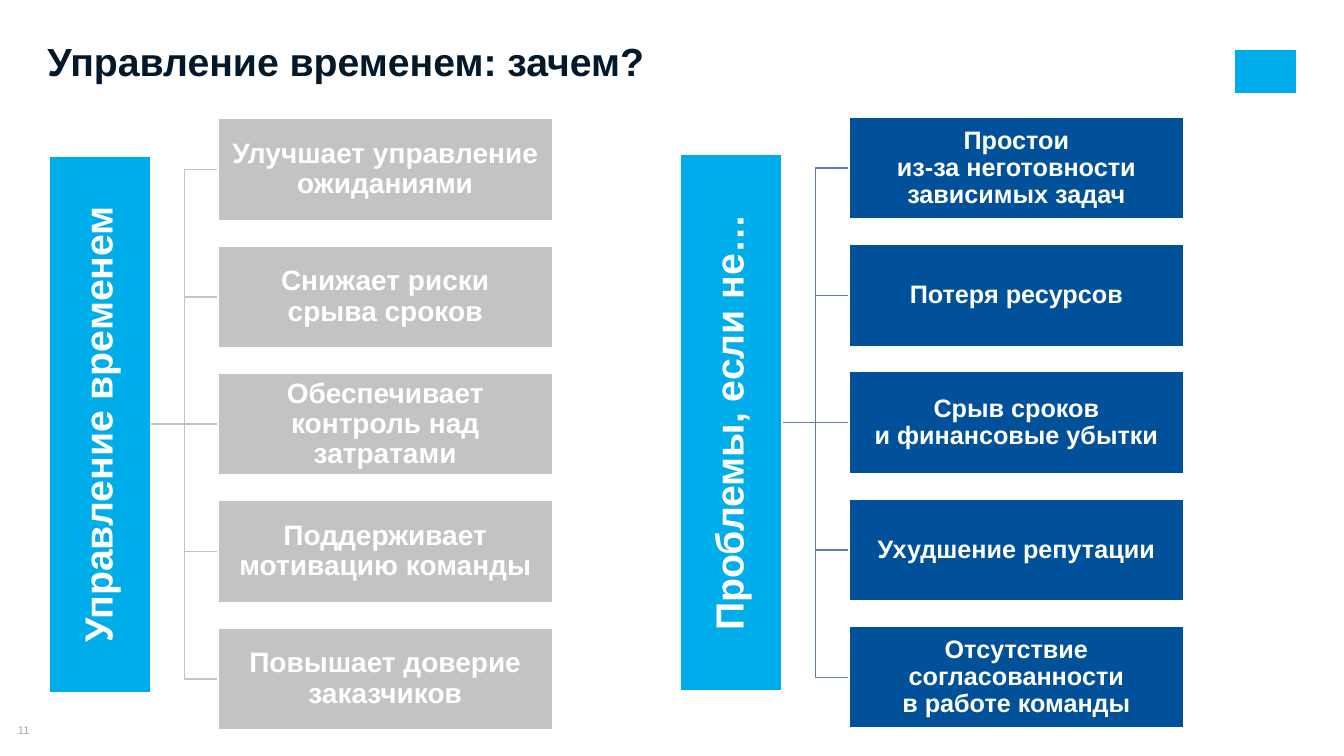
from dataclasses import dataclass

from lxml import etree
from pptx import Presentation
from pptx.dml.color import RGBColor
from pptx.enum.shapes import MSO_CONNECTOR, MSO_SHAPE
from pptx.enum.text import MSO_ANCHOR, PP_ALIGN
from pptx.oxml.ns import qn
from pptx.util import Inches, Pt

RECTANGLE = MSO_SHAPE.RECTANGLE
STRAIGHT = MSO_CONNECTOR.STRAIGHT
ELBOW = MSO_CONNECTOR.ELBOW
MIDDLE = MSO_ANCHOR.MIDDLE
TOP = MSO_ANCHOR.TOP
CENTER = PP_ALIGN.CENTER
LEFT = PP_ALIGN.LEFT

SLIDE_WIDTH = Inches(13.33)
SLIDE_HEIGHT = Inches(7.5)

HEADING_WIDTH = 7.58
HEADING_LENGTH = 70.93
BRANCH_START = 7.62
ITEM_START = 12.57
ITEM_WIDTH = 24.9
ITEM_HEIGHT = 13.47
ITEM_PITCH = 16.84


@dataclass(frozen=True)
class Theme:
    font: str = "Arial"
    title: str = "03182B"
    accent: str = "00ADEB"
    benefit: str = "C3C3C3"
    problem: str = "00519A"
    problem_branch: str = "5E79B5"
    light: str = "FFFFFF"
    page: str = "A6A6A6"
    heading_size: int = 28
    benefit_size: int = 20
    problem_size: int = 18
    page_size: int = 8


THEME = Theme()


@dataclass(frozen=True)
class Tree:
    heading: str
    items: tuple
    left: float
    top: float
    fill: str
    branch: str
    size: int


TREES = (
    Tree(
        "Управление временем",
        (
            "Улучшает управление ожиданиями",
            "Снижает риски\nсрыва сроков",
            "Обеспечивает контроль над затратами",
            "Поддерживает мотивацию команды",
            "Повышает доверие заказчиков",
        ),
        3.64, 15.7, THEME.benefit, THEME.benefit, THEME.benefit_size,
    ),
    Tree(
        "Проблемы, если не…",
        (
            "Простои\nиз-за неготовности зависимых задач",
            "Потеря ресурсов",
            "Срыв сроков\nи финансовые убытки",
            "Ухудшение репутации",
            "Отсутствие согласованности\nв работе команды",
        ),
        50.6, 15.5, THEME.problem, THEME.problem_branch, THEME.problem_size,
    ),
)


def across(percent):
    return round(SLIDE_WIDTH * percent / 100)


def down(percent):
    return round(SLIDE_HEIGHT * percent / 100)


def write(frame, text, size, color, bold=True, align=CENTER, anchor=MIDDLE,
          spacing=0.9, inset=0.0):
    frame.word_wrap = True
    frame.vertical_anchor = anchor
    frame.margin_left = frame.margin_right = Inches(inset)
    frame.margin_top = frame.margin_bottom = Inches(inset)
    paragraph = frame.paragraphs[0]
    paragraph.text = text
    paragraph.alignment = align
    paragraph.line_spacing = spacing
    paragraph.font.name = THEME.font
    paragraph.font.size = Pt(size)
    paragraph.font.bold = bold
    paragraph.font.color.rgb = RGBColor.from_string(color)


def add_label(slide, area, text, size, color, **style):
    label = slide.shapes.add_textbox(*area)
    write(label.text_frame, text, size, color, **style)


def add_block(slide, area, fill):
    block = slide.shapes.add_shape(RECTANGLE, *area)
    block.shadow.inherit = False
    block.fill.solid()
    block.fill.fore_color.rgb = RGBColor.from_string(fill)
    block.line.color.rgb = RGBColor.from_string(THEME.light)
    block.line.width = Pt(1)
    return block


def add_branch(slide, kind, start, end, color):
    branch = slide.shapes.add_connector(kind, *start, *end)
    branch.line.color.rgb = RGBColor.from_string(color)
    branch.line.width = Pt(1)
    etree.SubElement(branch._element.spPr, qn("a:effectLst"))


def add_heading(slide, tree, middle):
    length, width = down(HEADING_LENGTH), across(HEADING_WIDTH)
    center = across(tree.left) + width // 2
    area = (center - length // 2, middle - width // 2, length, width)
    heading = add_block(slide, area, THEME.accent)
    heading.rotation = 270
    write(heading.text_frame, tree.heading, THEME.heading_size, THEME.light,
          inset=0.02)


def add_tree(slide, tree):
    item_left = across(tree.left + ITEM_START)
    tops = [tree.top + row * ITEM_PITCH for row in range(len(tree.items))]
    centers = [down(top + ITEM_HEIGHT / 2) for top in tops]
    middle = centers[len(centers) // 2]
    root = (across(tree.left + BRANCH_START), middle)
    for center in centers:
        kind = STRAIGHT if center == middle else ELBOW
        add_branch(slide, kind, root, (item_left, center), tree.branch)
    add_heading(slide, tree, middle)
    for text, top in zip(tree.items, tops):
        area = (item_left, down(top), across(ITEM_WIDTH), down(ITEM_HEIGHT))
        item = add_block(slide, area, tree.fill)
        write(item.text_frame, text, tree.size, THEME.light, inset=0.01)


def main():
    presentation = Presentation()
    presentation.slide_width = SLIDE_WIDTH
    presentation.slide_height = SLIDE_HEIGHT
    slide = presentation.slides.add_slide(presentation.slide_layouts[6])

    add_block(slide, (across(91.82), down(6.5), across(4.65), down(5.9)),
              THEME.accent)
    add_label(slide, (0, down(95.73), across(3.53), down(1.73)), "11",
              THEME.page_size, THEME.page, bold=False, spacing=1.0)
    add_label(slide, (across(3.53), down(6.13), across(78.85), down(5.07)),
              "Управление временем: зачем?", THEME.heading_size, THEME.title,
              align=LEFT, anchor=TOP, spacing=0.8)
    for tree in TREES:
        add_tree(slide, tree)
    presentation.save("out.pptx")


if __name__ == "__main__":
    main()
